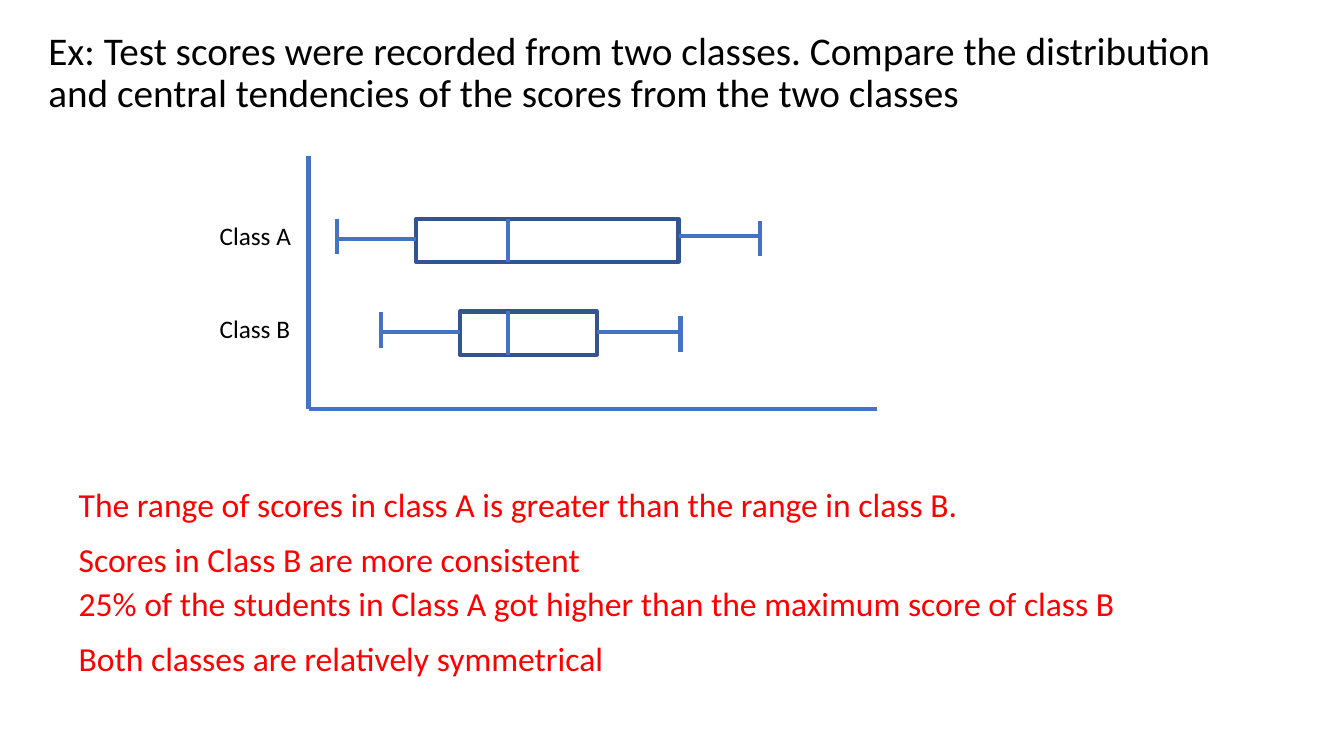
from dataclasses import dataclass

from lxml import etree
from pptx import Presentation
from pptx.dml.color import RGBColor
from pptx.enum.shapes import MSO_CONNECTOR, MSO_SHAPE
from pptx.enum.text import MSO_ANCHOR, MSO_AUTO_SIZE, PP_ALIGN
from pptx.oxml.ns import qn
from pptx.util import Inches, Pt

STRAIGHT = MSO_CONNECTOR.STRAIGHT
RECTANGLE = MSO_SHAPE.RECTANGLE
TOP = MSO_ANCHOR.TOP
NO_AUTOFIT = MSO_AUTO_SIZE.NONE
LEFT = PP_ALIGN.LEFT


@dataclass(frozen=True)
class Theme:
    """Colours, font and sizes of the slide."""
    font: str = "Calibri"
    text: RGBColor = RGBColor(0x00, 0x00, 0x00)
    answer: RGBColor = RGBColor(0xFF, 0x00, 0x00)
    line: RGBColor = RGBColor(0x44, 0x72, 0xC4)
    box: RGBColor = RGBColor(0x32, 0x54, 0x91)
    title_size: int = 28
    answer_size: int = 24
    label_size: int = 18
    line_width: int = 3


@dataclass(frozen=True)
class BoxPlot:
    """One class: positions from the axis corner, and offsets from the row's top."""
    name: str
    top: float
    low: float
    q1: float
    median: float
    q3: float
    high: float
    whiskers: tuple
    caps: tuple


THEME = Theme()
BOX_HEIGHT, CAP_HEIGHT = 0.43, 0.35
LABEL_SIZE, LABEL_OFFSET = (1.01, 0.4), (-0.98, -0.03)
TITLE = ("Ex: Test scores were recorded from two classes. Compare the distribution "
         "and central tendencies of the scores from the two classes")
PLOTS = [
    BoxPlot("Class A", 0.62, 0.28, 1.07, 1.98, 3.67, 4.48, (0.2, 0.17), (0, 0.02)),
    BoxPlot("Class B", 1.54, 0.72, 1.5, 1.98, 2.86, 3.69, (0.2, 0.2), (0.01, 0.05)),
]
ANSWERS = [
    ("The range of scores in class A is greater than the range in class B.", 0),
    ("Scores in Class B are more consistent", 10.3),
    ("25% of the students in Class A got higher than the maximum score of class B", 3.1),
    ("Both classes are relatively symmetrical", 10.3),
]


def place(sp, box):
    """Move a shape to a box given in inches."""
    sp.left, sp.top, sp.width, sp.height = (Inches(v) for v in box)


def add_run(p, text, size, color):
    """Add one formatted run to a paragraph."""
    r = p.add_run()
    r.text = text
    r.font.name = THEME.font
    r.font.size = Pt(size)
    r.font.color.rgb = color


def add_line(s, x1, y1, x2, y2):
    """Draw a straight line without a shadow."""
    c = s.shapes.add_connector(STRAIGHT, *(Inches(v) for v in (x1, y1, x2, y2)))
    c.line.color.rgb = THEME.line
    c.line.width = Pt(THEME.line_width)
    etree.SubElement(c._element.spPr, qn("a:effectLst"))


def add_title(s, box):
    """Fill the title placeholder with the question."""
    sp = s.shapes.title
    place(sp, box)
    tf = sp.text_frame
    tf.auto_size = NO_AUTOFIT
    tf.vertical_anchor = TOP
    p = tf.paragraphs[0]
    p.alignment = LEFT
    p.line_spacing = 0.9
    add_run(p, TITLE, THEME.title_size, THEME.text)


def add_box_plot(s, x, y, plot):
    """Draw the box, median, whiskers and label of one class from the axis corner."""
    top = y + plot.top
    sp = s.shapes.add_shape(RECTANGLE, 0, 0, 0, 0)
    place(sp, (x + plot.q1, top, plot.q3 - plot.q1, BOX_HEIGHT))
    sp.shadow.inherit = False
    sp.fill.background()
    sp.line.color.rgb = THEME.box
    sp.line.width = Pt(THEME.line_width)
    add_line(s, x + plot.median, top, x + plot.median, top + BOX_HEIGHT)
    ends = ((plot.low, plot.q1), (plot.high, plot.q3))
    for (end, edge), whisker, cap in zip(ends, plot.whiskers, plot.caps):
        add_line(s, x + end, top + whisker, x + edge, top + whisker)
        add_line(s, x + end, top + cap, x + end, top + cap + CAP_HEIGHT)
    dx, dy = LABEL_OFFSET
    label = s.shapes.add_textbox(0, 0, 0, 0)
    place(label, (x + dx, top + dy, *LABEL_SIZE))
    tf = label.text_frame
    tf.word_wrap = True
    add_run(tf.paragraphs[0], plot.name, THEME.label_size, THEME.text)


def add_diagram(s, box):
    """Draw the axes and a box plot for each class."""
    x, y, w, h = box
    for plot in PLOTS:
        add_box_plot(s, x, y, plot)
    add_line(s, x, y + h, x + w, y + h)
    add_line(s, x, y + h, x, y)


def add_answers(s, box):
    """Fill the body placeholder with the conclusions, without bullets."""
    sp = s.placeholders[1]
    place(sp, box)
    tf = sp.text_frame
    tf.auto_size = NO_AUTOFIT
    tf.vertical_anchor = TOP
    for i, (text, gap) in enumerate(ANSWERS):
        p = tf.add_paragraph() if i else tf.paragraphs[0]
        p.line_spacing = 1.0
        p.space_before = Pt(gap)
        pPr = p._p.get_or_add_pPr()
        pPr.set("marL", "0")
        pPr.set("indent", "0")
        etree.SubElement(pPr, qn("a:buNone"))
        add_run(p, text, THEME.answer_size, THEME.answer)


def main():
    """Build the slide and save it."""
    prs = Presentation()
    prs.slide_width, prs.slide_height = Inches(13.33), Inches(7.5)
    s = prs.slides.add_slide(prs.slide_layouts[1])
    add_title(s, (0.38, 0.26, 11.88, 1.22))
    add_diagram(s, (3.06, 1.55, 5.64, 2.51))
    add_answers(s, (0.68, 4.75, 11.63, 2.05))
    prs.save("out.pptx")


if __name__ == "__main__":
    main()
